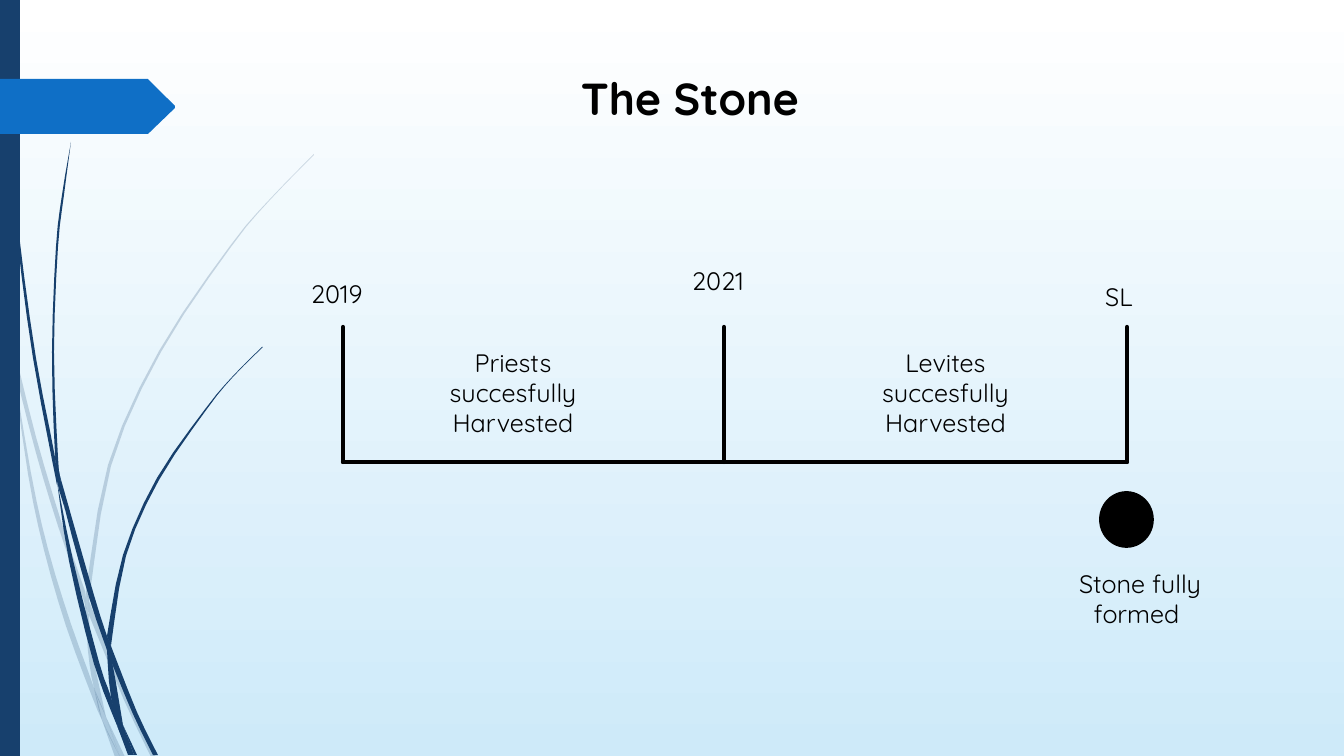
import dataclasses

import pptx
import pptx.dml.color
import pptx.enum.shapes
import pptx.enum.text
import pptx.oxml
import pptx.oxml.ns
import pptx.util

SHAPE = pptx.enum.shapes.MSO_SHAPE
ALIGN = pptx.enum.text.PP_ALIGN
qn = pptx.oxml.ns.qn


@dataclasses.dataclass(frozen=True)
class Theme:
    font: str = "Quicksand"
    ink: str = "000000"
    navy: str = "17406D"
    blue: str = "0F6FC6"
    top: str = "FFFFFF"
    base: str = "CEEAF9"
    head: int = 32
    body: int = 18
    rule: float = 3
    edge: float = 1.25
    faint: int = 20


THEME = Theme()
PX = 914400 / 100.8
WIDE, HIGH = 1344, 756

TITLE = ("The Stone", (534, 65, 312, 65))

# Text, box, alignment
LABELS = [
    ("2019", (301, 273, 85, 40), ALIGN.LEFT),
    ("2021", (682, 260, 85, 40), ALIGN.LEFT),
    ("SL", (1084, 276, 70, 40), ALIGN.CENTER),
    ("Priests succesfully Harvested", (435, 342, 156, 102), ALIGN.CENTER),
    ("Levites succesfully Harvested", (857, 342, 177, 102), ALIGN.CENTER),
    ("Stone fully formed ", (1049, 563, 182, 72), ALIGN.CENTER),
]

TICKS = [343, 724, 1127]
TICK_TOP, AXIS = 327, 462
STONE = (1100, 492, 53, 55)
STRIP = (0, 0, 20, HIGH)
FLAG = [(0, 79), (148, 79), (175, 106), (175, 108), (148, 134), (0, 134)]

# Each piece of grass: its left and right edge, from top to bottom
PALE = [
    ([(0, 284), (9, 325), (11, 353)], [(0, 301), (10, 347), (11, 353)]),
    ([(14, 348), (36, 437), (62, 524), (85, 591)],
     [(17, 379), (36, 453), (58, 526), (85, 604)]),
    ([(89, 615), (124, 700), (151, 757)], [(89, 601), (128, 698), (156, 757)]),
    ([(106, 717), (120, 757)], [(106, 717), (125, 757)]),
    ([(11, 353), (28, 474), (44, 550), (66, 626), (93, 699), (102, 720)],
     [(11, 353), (31, 473), (48, 549), (71, 624), (94, 688), (102, 720)]),
    ([(85, 604), (88, 651), (94, 688), (106, 717)],
     [(89, 615), (92, 651), (106, 717)]),
    ([(314, 154), (270, 199), (230, 246), (159, 351), (108, 465), (86, 591)],
     [(314, 155), (270, 200), (231, 247), (161, 352), (111, 466), (89, 601)]),
    ([(102, 720), (115, 757)], [(102, 720), (120, 757)]),
    ([(86, 591), (85, 604), (89, 613)], [(86, 591), (89, 601), (89, 615)]),
    ([(94, 688), (102, 720), (120, 757)], [(94, 688), (106, 717), (120, 757)]),
]
DARK = [
    ([(3, 0), (7, 111), (17, 235), (33, 358), (57, 485)],
     [(4, 0), (8, 110), (19, 234), (36, 358), (55, 457), (57, 485)]),
    ([(60, 476), (65, 509), (89, 597), (107, 650)],
     [(60, 476), (94, 595), (107, 636)]),
    ([(111, 661), (133, 714), (153, 755)], [(111, 646), (137, 712), (158, 755)]),
    ([(57, 481), (69, 561), (94, 664), (118, 728)],
     [(57, 481), (73, 560), (99, 662), (111, 697), (118, 728)]),
    ([(71, 142), (62, 195), (56, 247), (52, 352), (55, 453), (60, 476)],
     [(71, 142), (64, 195), (58, 247), (54, 352), (58, 457), (60, 476)]),
    ([(123, 725), (134, 755)], [(123, 725), (137, 755)]),
    ([(55, 453), (57, 481), (65, 509)], [(55, 453), (60, 476), (65, 509)]),
    ([(262, 347), (233, 376), (206, 408), (157, 478), (123, 555), (107, 636)],
     [(263, 347), (233, 377), (207, 409), (159, 480), (126, 556), (111, 646)]),
    ([(118, 728), (128, 755)], [(118, 728), (132, 755)]),
    ([(107, 650), (111, 697), (123, 725)], [(107, 650), (112, 661), (123, 725)]),
    ([(107, 636), (107, 650), (112, 661)], [(107, 636), (111, 646), (112, 661)]),
    ([(111, 697), (118, 728), (131, 755)],
     [(111, 697), (123, 725), (134, 755)]),
]
STEPS = 3


def emu(*vals):
    return [pptx.util.Emu(round(v * PX)) for v in vals]


def rgb(code):
    return pptx.dml.color.RGBColor.from_string(code)


def paint(shape, code):
    shape.shadow.inherit = False
    shape.fill.solid()
    shape.fill.fore_color.rgb = rgb(code)
    shape.line.fill.background()


def write(shape, text, size, align, bold=False):
    frame = shape.text_frame
    frame.word_wrap = True
    para = frame.paragraphs[0]
    para.alignment = align
    run = para.add_run()
    run.text = text
    run.font.name = THEME.font
    run.font.size = pptx.util.Pt(size)
    run.font.bold = bold
    run.font.color.rgb = rgb(THEME.ink)


def smooth(knots):
    """Run a Catmull-Rom curve through the knots; two knots stay a line."""
    if len(knots) < 3:
        return knots
    ends = [knots[0], *knots, knots[-1]]
    curve = []
    for a, b, c, d in zip(ends, ends[1:], ends[2:], ends[3:]):
        for step in range(STEPS):
            t = step / STEPS
            curve.append([
                q + t / 2 * (r - p + t * (2 * p - 5 * q + 4 * r - s
                                          + t * (3 * q - p - 3 * r + s)))
                for p, q, r, s in zip(a, b, c, d)])
    return curve + [knots[-1]]


def add_form(shapes, points, code):
    rim = [emu(*point) for point in points]
    form = shapes.build_freeform(*rim[0])
    form.add_line_segments(rim[1:], close=True)
    shape = form.convert_to_shape()
    paint(shape, code)
    return shape


def add_blade(shapes, left, right, faint=None):
    blade = add_form(shapes, smooth(left) + smooth(right)[::-1], THEME.navy)
    if faint:
        color = blade.element.spPr.find(qn("a:solidFill"))[0]
        color.append(pptx.oxml.parse_xml(
            '<a:alpha xmlns:a="http://schemas.openxmlformats.org/drawingml/2006/main"'
            f' val="{faint * 1000}"/>'))


def add_rule(shapes, *ends):
    rule = shapes.add_connector(
        pptx.enum.shapes.MSO_CONNECTOR.STRAIGHT, *emu(*ends))
    rule.line.color.rgb = rgb(THEME.ink)
    rule.line.width = pptx.util.Pt(THEME.rule)
    props = rule.element.spPr
    props.find(qn("a:ln")).set("cap", "rnd")
    props.append(pptx.oxml.parse_xml(
        '<a:effectLst xmlns:a="http://schemas.openxmlformats.org/drawingml/2006/main"/>'))


def main():
    deck = pptx.Presentation()
    deck.slide_width, deck.slide_height = emu(WIDE, HIGH)
    slide = deck.slides.add_slide(deck.slide_layouts[5])
    shapes = slide.shapes

    back = slide.background.fill
    back.gradient()
    back.gradient_angle = 270
    for stop, code in zip(back.gradient_stops, (THEME.top, THEME.base)):
        stop.color.rgb = rgb(code)

    for edges in PALE:
        add_blade(shapes, *edges, faint=THEME.faint)
    for edges in DARK:
        add_blade(shapes, *edges)
    paint(shapes.add_shape(SHAPE.RECTANGLE, *emu(*STRIP)), THEME.navy)
    add_form(shapes, FLAG, THEME.blue)

    text, box = TITLE
    title = shapes.title
    title.left, title.top, title.width, title.height = emu(*box)
    title.text_frame.vertical_anchor = pptx.enum.text.MSO_ANCHOR.MIDDLE
    write(title, text, THEME.head, ALIGN.CENTER, bold=True)

    add_rule(shapes, TICKS[0], AXIS, TICKS[-1], AXIS)
    for x in TICKS:
        add_rule(shapes, x, TICK_TOP, x, AXIS)
    for text, box, align in LABELS:
        write(shapes.add_textbox(*emu(*box)), text, THEME.body, align)

    stone = shapes.add_shape(SHAPE.FLOWCHART_CONNECTOR, *emu(*STONE))
    paint(stone, THEME.ink)
    stone.line.color.rgb = rgb(THEME.ink)
    stone.line.width = pptx.util.Pt(THEME.edge)
    deck.save("out.pptx")


if __name__ == "__main__":
    main()
